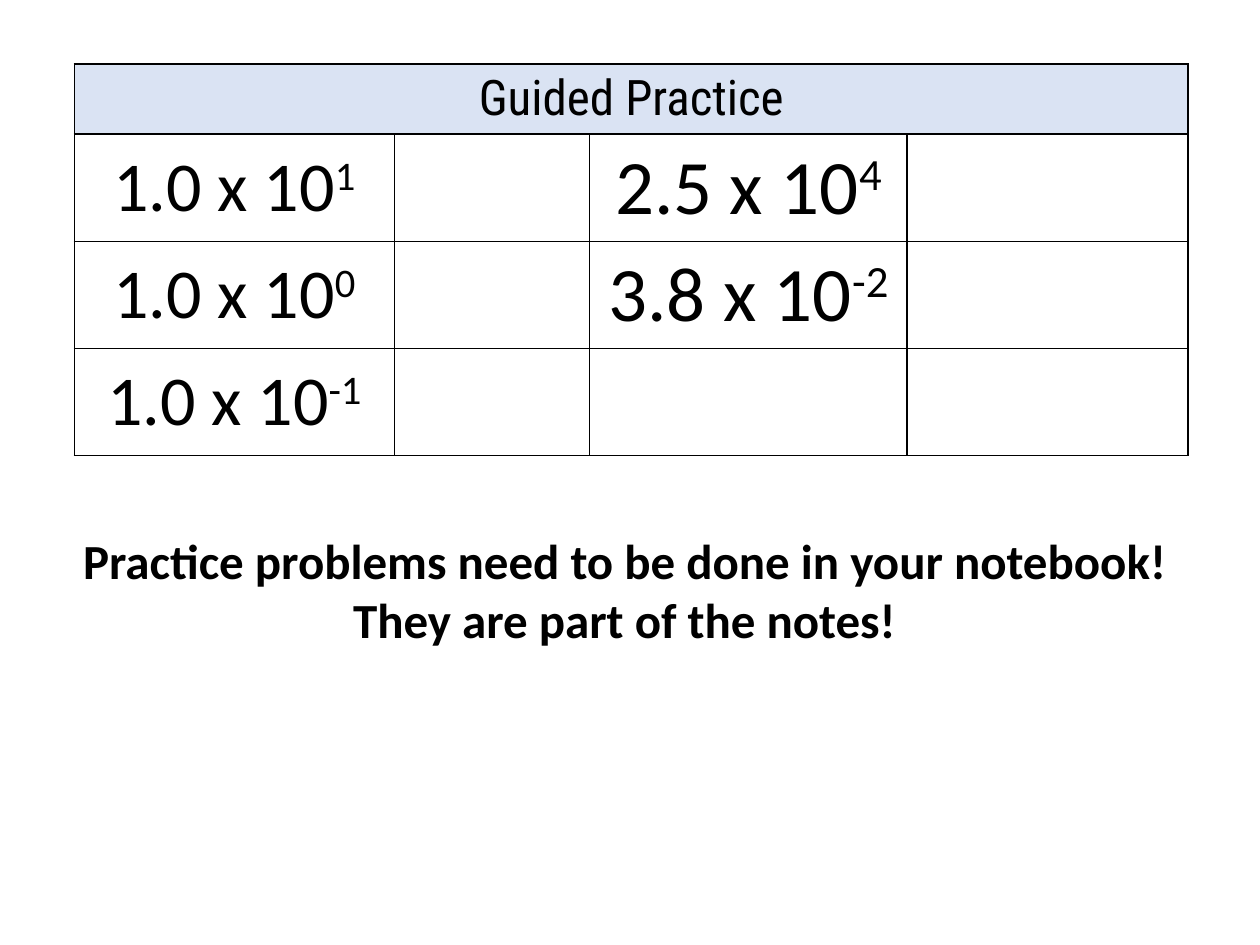
from lxml import etree
from pptx import Presentation
from pptx.dml.color import RGBColor
from pptx.enum.text import MSO_ANCHOR, PP_ALIGN
from pptx.oxml.ns import qn
from pptx.util import Inches, Pt

BLACK = RGBColor(0x00, 0x00, 0x00)
HEADER_BLUE = RGBColor(0xDA, 0xE3, 0xF3)
COLUMNS = (2.54, 1.55, 2.52, 2.23)
ROWS = (0.55, 0.85, 0.85, 0.85)
PROBLEMS = (
    (1, 0, "1.0 x 10", "1", 40),
    (2, 0, "1.0 x 10", "0", 40),
    (3, 0, "1.0 x 10", "-1", 40),
    (1, 2, "2.5 x 10", "4", 44),
    (2, 2, "3.8 x 10", "-2", 44),
)


def add_run(p, text, size, font="Calibri", bold=False):
    p.alignment = PP_ALIGN.CENTER
    r = p.add_run()
    r.text = text
    r.font.size = Pt(size)
    r.font.name = font
    r.font.bold = bold
    r.font.color.rgb = BLACK
    return r


def border_cell(cell):
    tc_pr = cell._tc.get_or_add_tcPr()
    for i, side in enumerate(("a:lnL", "a:lnR", "a:lnT", "a:lnB")):
        ln = etree.Element(qn(side), w=str(Pt(1)))
        fill = etree.SubElement(ln, qn("a:solidFill"))
        etree.SubElement(fill, qn("a:srgbClr"), val=str(BLACK))
        tc_pr.insert(i, ln)


def add_practice_table(s, left, top):
    table = s.shapes.add_table(
        len(ROWS), len(COLUMNS), Inches(left), Inches(top),
        Inches(sum(COLUMNS)), Inches(sum(ROWS))).table
    table.first_row = table.horz_banding = False
    for column, width in zip(table.columns, COLUMNS):
        column.width = Inches(width)
    for row, height in zip(table.rows, ROWS):
        row.height = Inches(height)
    for cell in table.iter_cells():
        cell.vertical_anchor = MSO_ANCHOR.MIDDLE
        cell.fill.background()
        border_cell(cell)

    header = table.cell(0, 0)
    header.merge(table.cell(0, len(COLUMNS) - 1))
    header.fill.solid()
    header.fill.fore_color.rgb = HEADER_BLUE
    add_run(header.text_frame.paragraphs[0], "Guided Practice", 28, "Roboto Condensed")

    for row, column, base, exponent, size in PROBLEMS:
        p = table.cell(row, column).text_frame.paragraphs[0]
        add_run(p, base, size)
        r = add_run(p, exponent, size)
        r.font._element.set("baseline", "30000")


def add_reminder(s, left, top, width, height):
    tf = s.shapes.add_textbox(
        Inches(left), Inches(top), Inches(width), Inches(height)).text_frame
    tf.word_wrap = True
    add_run(tf.paragraphs[0],
            "Practice problems need to be done in your notebook! "
            "They are part of the notes!", 28, bold=True)


def main():
    prs = Presentation()
    prs.slide_width, prs.slide_height = Inches(10), Inches(7.5)
    s = prs.slides.add_slide(prs.slide_layouts[6])
    add_practice_table(s, 0.59, 0.51)
    add_reminder(s, 0.48, 4.16, 8.95, 1.04)
    prs.save("out.pptx")


if __name__ == "__main__":
    main()
